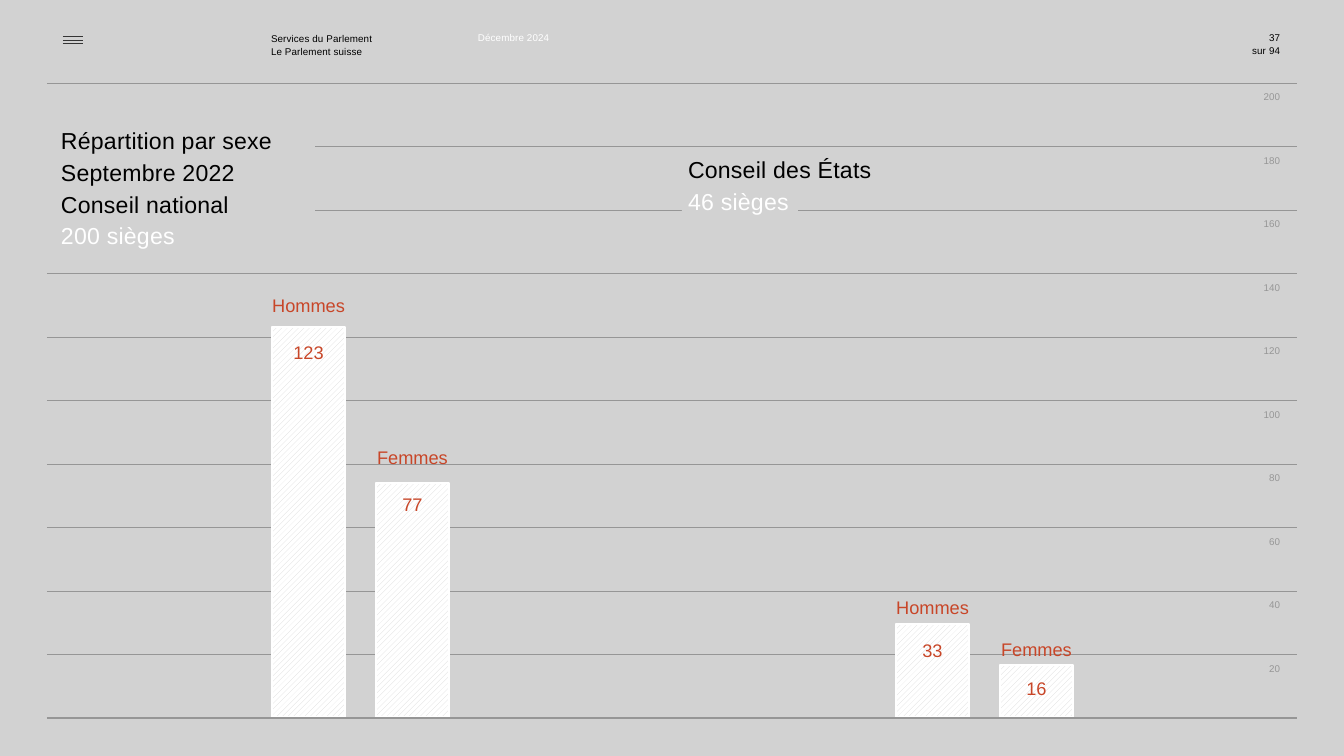
from lxml import etree
from pptx import Presentation
from pptx import util as u
from pptx.dml.color import RGBColor
from pptx.enum import dml, shapes, text
from pptx.oxml.ns import qn

# Content
COLORS = {"back": "D2D2D2", "ink": "000000", "white": "FFFFFF", "grid": "969696",
          "menu": "343434", "red": "C84628", "hatch": "D9D9D9"}
FORMATS = {
    "small": {"size": 7, "color": "ink", "spc": 10, "line": 1},
    "sender": {"size": 7, "color": "ink", "spc": 10, "line": 1.1},
    "date": {"size": 7, "color": "white", "spc": 10, "line": 1},
    "tick": {"size": 7, "color": "grid", "spc": 0, "line": 1},
    "title": {"size": 16.5, "color": "ink", "spc": 20, "line": 1.14},
    "seats": {"size": 16.5, "color": "white", "spc": 20, "line": 1.14},
    "label": {"size": 13, "color": "red", "spc": 0, "line": 1.2},
}
# Box in px, alignment, lines as (text, format)
TEXTS = [
    ((271, 32, 131, 25), "LEFT",
     [("Services du Parlement", "sender"), ("Le Parlement suisse", "sender")]),
    ((478, 32, 122, 12), "LEFT", [("Décembre 2024", "date")]),
    ((1236, 32, 44, 12), "RIGHT", [("37", "small")]),
    ((1236, 45, 44, 12), "RIGHT", [("sur 94", "small")]),
    ((61, 123, 563, 129), "LEFT",
     [("Répartition par sexe", "title"), ("Septembre 2022", "title"),
      ("Conseil national", "title"), ("200 sièges", "seats")]),
    ((688, 152, 191, 65), "LEFT",
     [("Conseil des États", "title"), ("46 sièges", "seats")]),
]
MASKS = [(39, 113, 276, 103), (682, 153, 116, 103)]
# Left of each council; bars as (name, seats, bar top, label top, gap in points)
COUNCILS = [
    (272, [("Hommes", 123, 327, 290, 15), ("Femmes", 77, 483, 442, 15)]),
    (896, [("Hommes", 33, 624, 592, 12), ("Femmes", 16, 665, 634, 9)]),
]
BAR_W, BAR_STEP, BAR_FOOT = 73, 104, 717
GRID_L, GRID_R, GRID_TOP, GRID_BASE = 47, 1297, 83, 718
TICKS = range(200, 0, -20)
MENU_YS = (36, 40, 43)
W, H = 1344, 756
SCALE = 12192000 / W


def px(*lengths):
    return [u.Emu(round(n * SCALE)) for n in lengths]


def rgb(name):
    return RGBColor.from_string(COLORS[name])


def add_line(x1, x2, y, color, width):
    c = s.shapes.add_connector(shapes.MSO_CONNECTOR.STRAIGHT, *px(x1, y, x2, y))
    c.line.color.rgb = rgb(color)
    c.line.width = u.Pt(width)
    etree.SubElement(c._element.spPr, qn("a:effectLst"))


def add_rect(box):
    sp = s.shapes.add_shape(shapes.MSO_SHAPE.RECTANGLE, *px(*box))
    sp.shadow.inherit = False
    return sp


def add_text(box, align, lines, gap=0):
    tf = s.shapes.add_textbox(*px(*box)).text_frame
    for name, value in {"word_wrap": True, "margin_left": 0, "margin_top": 0,
                        "margin_right": 0, "margin_bottom": 0}.items():
        setattr(tf, name, value)
    for i, (words, style) in enumerate(lines):
        f = FORMATS[style]
        p = tf.add_paragraph() if i else tf.paragraphs[0]
        p.alignment = text.PP_ALIGN[align]
        p.line_spacing = f["line"]
        if i and gap:
            p.space_before = u.Pt(gap)
        r = p.add_run()
        r.text = words
        for name, value in {"name": "Arial", "size": u.Pt(f["size"])}.items():
            setattr(r.font, name, value)
        r.font.color.rgb = rgb(f["color"])
        if f["spc"]:
            r._r.get_or_add_rPr().set("spc", str(f["spc"]))


prs = Presentation()
prs.slide_width, prs.slide_height = px(W, H)
s = prs.slides.add_slide(prs.slide_layouts[6])
s.background.fill.solid()
s.background.fill.fore_color.rgb = rgb("back")

# Menu sign
for y in MENU_YS:
    add_line(63, 83, y, "menu", 0.4)

# Grid with scale
step = (GRID_BASE - GRID_TOP) / len(TICKS)
for i, tick in enumerate(TICKS):
    y = GRID_TOP + i * step
    add_line(GRID_L, GRID_R, y, "grid", 0.25)
    add_text((1242, y + 8, 38, 12), "RIGHT", [(str(tick), "tick")])

# Gaps in the grid behind the titles
for box in MASKS:
    sp = add_rect(box)
    sp.fill.solid()
    sp.fill.fore_color.rgb = rgb("back")
    sp.line.fill.background()

# Hatched bars with labels
for left, bars in COUNCILS:
    for i, (name, seats, top, label_top, gap) in enumerate(bars):
        x = left + i * BAR_STEP
        sp = add_rect((x, top, BAR_W, BAR_FOOT - top))
        sp.fill.patterned()
        sp.fill.pattern = dml.MSO_PATTERN.WIDE_UPWARD_DIAGONAL
        sp.fill.fore_color.rgb = rgb("hatch")
        sp.fill.back_color.rgb = rgb("white")
        sp.line.color.rgb = rgb("white")
        sp.line.width = u.Pt(1.5)
        add_text((x - 1, label_top, BAR_W + 2, 70), "CENTER",
                 [(name, "label"), (str(seats), "label")], gap)

# Header and titles
for box, align, lines in TEXTS:
    add_text(box, align, lines)

# Base line
add_line(GRID_L, GRID_R, GRID_BASE, "grid", 1)

prs.save("out.pptx")
